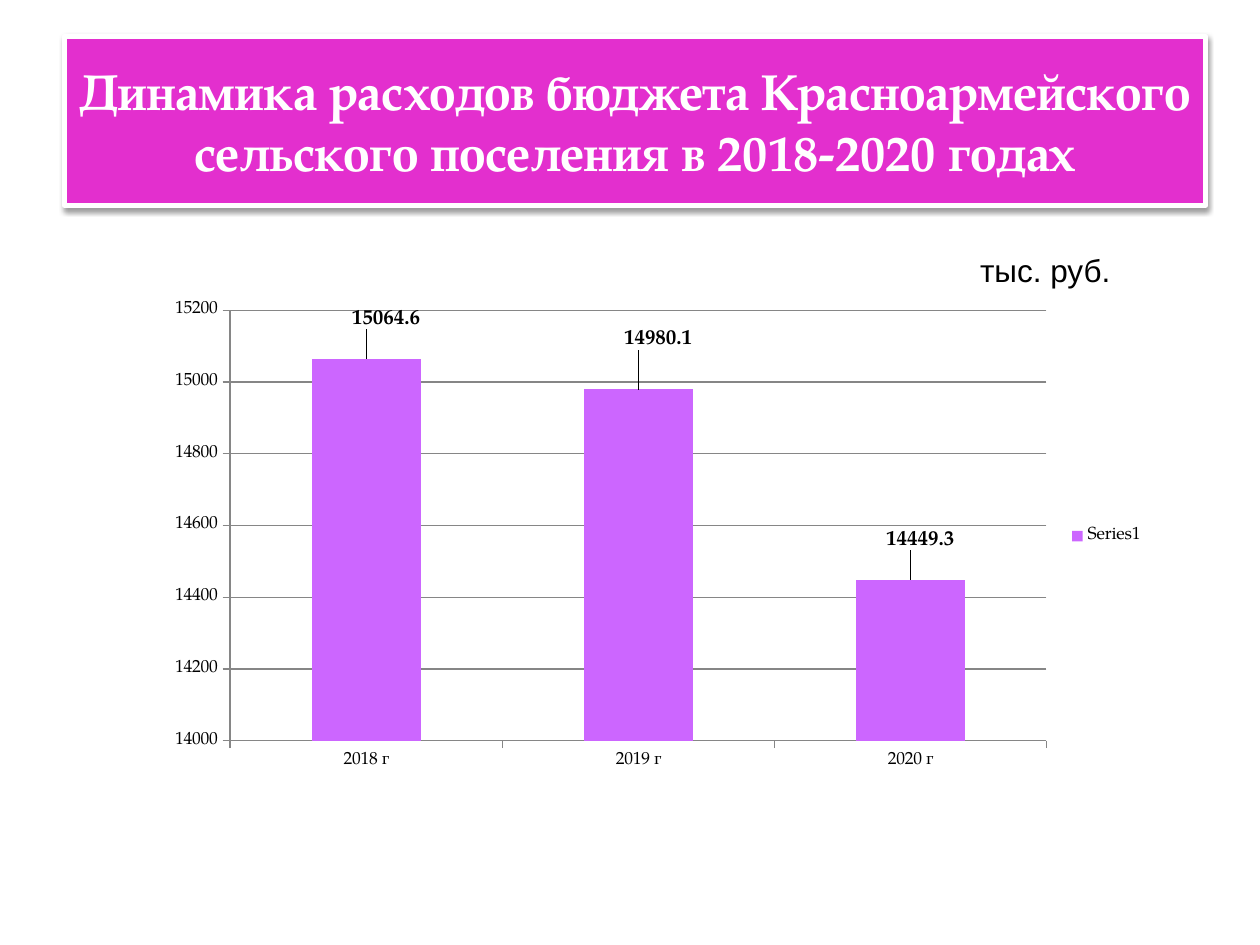
from lxml.etree import SubElement
from pptx import Presentation
from pptx.chart.data import CategoryChartData
from pptx.dml.color import RGBColor
from pptx.enum.chart import XL_CHART_TYPE, XL_LABEL_POSITION, XL_LEGEND_POSITION, XL_TICK_MARK
from pptx.enum.text import MSO_ANCHOR, MSO_AUTO_SIZE, PP_ALIGN
from pptx.oxml import parse_xml
from pptx.oxml.ns import nsdecls, qn
from pptx.util import Inches, Pt

SERIF = "TeX Gyre Pagella"


def style(font, name, size, color, bold=False):
    font.name, font.size, font.bold = name, Pt(size), bold
    font.color.rgb = RGBColor.from_string(color)


def place(layout, **parts):
    """Fill a chart layout element with a manual layout."""
    manual = SubElement(layout, qn("c:manualLayout"))
    for key, val in parts.items():
        SubElement(manual, qn("c:" + key)).set("val", str(val))


prs = Presentation()
prs.slide_width, prs.slide_height = Inches(10), Inches(7.5)
slide = prs.slides.add_slide(prs.slide_layouts[5])

# Title banner with white border and soft shadow
title = slide.shapes.title
title.left, title.top = Inches(0.51), Inches(0.29)
title.width, title.height = Inches(9.06), Inches(1.34)
title.fill.solid()
title.fill.fore_color.rgb = RGBColor.from_string("E32FCE")
title.line.color.rgb = RGBColor.from_string("FFFFFF")
title.line.width = Pt(3)
title._element.spPr.append(parse_xml(
    f'<a:effectLst {nsdecls("a")}><a:outerShdw blurRad="{Pt(3.1)}" dist="{Pt(1.6)}" '
    'dir="5400000" rotWithShape="0"><a:srgbClr val="000000"><a:alpha val="38000"/>'
    '</a:srgbClr></a:outerShdw></a:effectLst>'))
frame = title.text_frame
frame.text = "Динамика расходов бюджета Красноармейского сельского поселения в 2018-2020 годах"
frame.word_wrap = True
frame.auto_size = MSO_AUTO_SIZE.NONE
frame.vertical_anchor = MSO_ANCHOR.MIDDLE
frame.paragraphs[0].alignment = PP_ALIGN.CENTER
style(frame.paragraphs[0].runs[0].font, SERIF, 28.8, "FFFFFF", True)

# Unit of measure
unit = slide.shapes.add_textbox(Inches(7.68), Inches(1.94), Inches(1.73), Inches(0.4))
unit.text_frame.word_wrap = True
unit.text_frame.text = "тыс. руб."
style(unit.text_frame.paragraphs[0].runs[0].font, "Arial", 18, "000000")

# Column chart
data = CategoryChartData(number_format="General")
data.categories = ["2018 г", "2019 г", "2020 г"]
data.add_series("Series1", [15064.6, 14980.1, 14449.3])
chart = slide.shapes.add_chart(
    XL_CHART_TYPE.COLUMN_CLUSTERED, Inches(1.23), Inches(2.32),
    Inches(7.95), Inches(3.87), data).chart
style(chart.font, SERIF, 10, "000000")
chart.has_title = False
chart.has_legend = True
chart.legend.position = XL_LEGEND_POSITION.RIGHT
chart.legend.include_in_layout = False

# Axes and grid
cat, val = chart.category_axis, chart.value_axis
val.minimum_scale, val.maximum_scale, val.major_unit = 14000, 15200, 200
val.has_major_gridlines = True
for axis in (cat, val):
    axis.major_tick_mark = XL_TICK_MARK.OUTSIDE
for part in (cat.format, val.format, val.major_gridlines.format):
    part.line.color.rgb = RGBColor.from_string("868686")
    part.line.width = Pt(0.75)

# Plot area
area = chart._chartSpace.chart.plotArea
for old in area.findall(qn("c:layout")):
    area.remove(old)
inner = parse_xml(f'<c:layout {nsdecls("c")}/>')
area.insert(0, inner)
place(inner, layoutTarget="inner", xMode="edge", yMode="edge",
      x=0.075, y=0.037, w=0.815, h=0.883)

# Columns and their shifted labels
plot = chart.plots[0]
plot.gap_width = 150
plot.vary_by_categories = False
bars = plot.series[0]
bars.format.fill.solid()
bars.format.fill.fore_color.rgb = RGBColor.from_string("CC66FF")
bars.data_labels.show_value = True
style(bars.data_labels.font, SERIF, 12, "000000", True)
for i, (dx, dy) in enumerate([(0.02, -0.05), (0.02, -0.07), (0.01, -0.05)]):
    label = bars.points[i].data_label
    label.position = XL_LABEL_POSITION.OUTSIDE_END
    style(label.font, SERIF, 12, "000000", True)
    shift = parse_xml(f'<c:layout {nsdecls("c")}/>')
    bars.data_labels._element.findall(qn("c:dLbl"))[i].insert(1, shift)
    place(shift, x=dx, y=dy)

prs.save("out.pptx")
